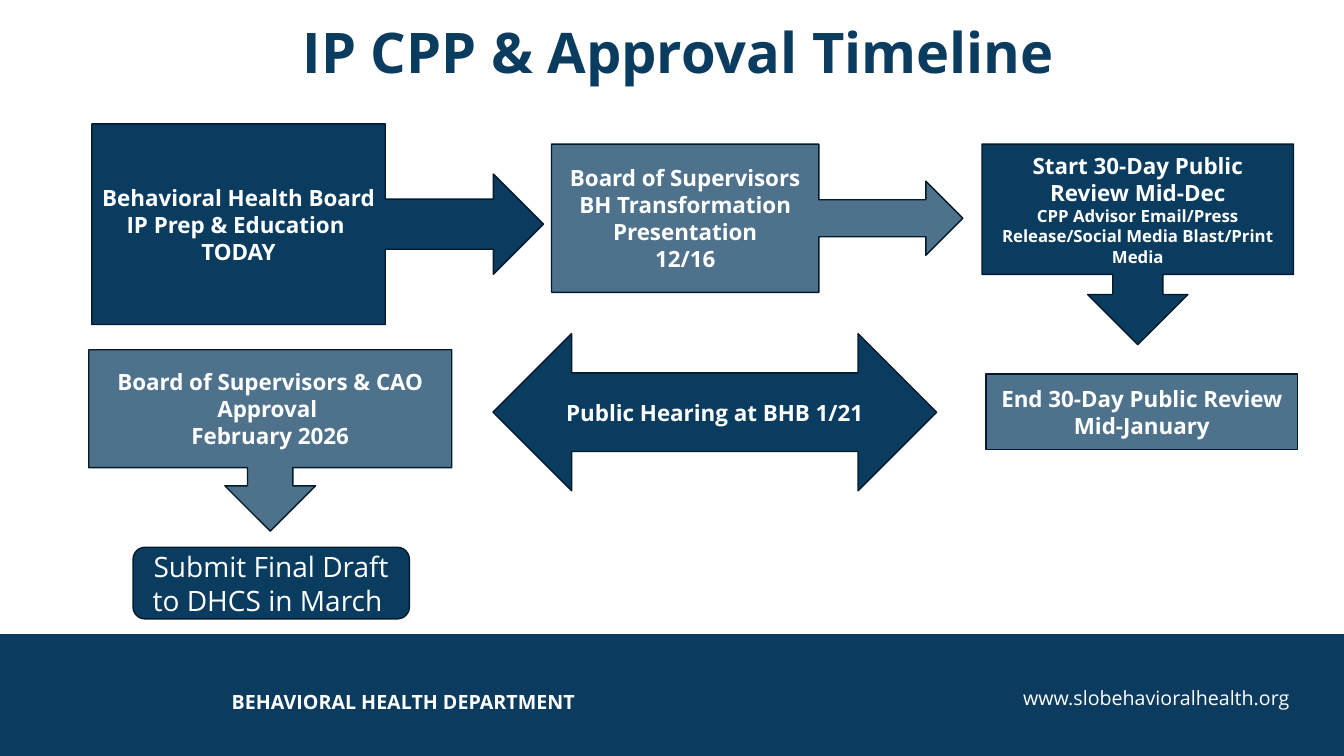
"""Build the IP CPP and approval timeline slide."""
from dataclasses import dataclass

import pptx
import pptx.dml.color
import pptx.enum.shapes
import pptx.enum.text
import pptx.oxml.ns
import pptx.util
from lxml import etree

SHAPES = pptx.enum.shapes.MSO_SHAPE
ALIGN = pptx.enum.text.PP_ALIGN
WIDTH = pptx.util.Inches(13.33)
HEIGHT = pptx.util.Inches(7.5)
NAVY, OUTLINE, WHITE, FOOTER = "0A3C5F", "041A2A", "FFFFFF", "0B3B5E"


@dataclass(frozen=True)
class Area:
    """Hold left, top, width and height as percentages of the slide."""
    left: float
    top: float
    width: float
    height: float

    def lengths(self) -> tuple[int, int, int, int]:
        """Return the area in slide units."""
        return (int(WIDTH * self.left / 100), int(HEIGHT * self.top / 100),
                int(WIDTH * self.width / 100), int(HEIGHT * self.height / 100))


@dataclass(frozen=True)
class Line:
    """Describe one paragraph."""
    text: str
    size: int = 16
    bold: bool = True
    color: str = WHITE
    align: ALIGN = ALIGN.CENTER


@dataclass(frozen=True)
class Step:
    """Describe one timeline shape."""
    kind: SHAPES
    area: Area
    lines: tuple[Line, ...]
    opacity: int = 100


@dataclass(frozen=True)
class Label:
    """Describe one free text box."""
    area: Area
    line: Line
    indent: float = 0


LABELS = (
    Label(Area(16.5, 90.53, 39.16, 4.53),
          Line("BEHAVIORAL HEALTH DEPARTMENT", 14, align=ALIGN.LEFT)),
    Label(Area(57.54, 90, 39.16, 4.53),
          Line("www.slobehavioralhealth.org", 14, False, align=ALIGN.RIGHT)),
    Label(Area(16.58, 1.6, 66.84, 10.27),
          Line("IP CPP & Approval Timeline", 40, color=NAVY), 0.12),
)

STEPS = (
    Step(SHAPES.LEFT_RIGHT_ARROW, Area(36.68, 44.13, 33.01, 20.8),
         (Line("Public Hearing at BHB 1/21"),)),
    Step(SHAPES.RIGHT_ARROW_CALLOUT, Area(6.83, 16.4, 33.61, 26.53),
         (Line("Behavioral Health Board IP Prep & Education "), Line("TODAY"))),
    Step(SHAPES.RIGHT_ARROW_CALLOUT, Area(41.04, 19.07, 30.61, 19.6),
         (Line("Board of Supervisors BH Transformation Presentation"),
          Line("12/16")), 72),
    Step(SHAPES.RECTANGLE, Area(73.37, 49.47, 23.18, 10),
         (Line("End 30-Day Public Review Mid-January"),), 72),
    Step(SHAPES.DOWN_ARROW_CALLOUT, Area(6.6, 46.27, 27.01, 24),
         (Line("Board of Supervisors & CAO Approval "),
          Line("February 2026")), 72),
    Step(SHAPES.DOWN_ARROW_CALLOUT, Area(73.07, 19.07, 23.18, 26.53),
         (Line("Start 30-Day Public Review Mid-Dec"),
          Line("CPP Advisor Email/Press Release/Social Media Blast/Print Media",
               12))),
    Step(SHAPES.ROUNDED_RECTANGLE, Area(9.9, 72.4, 20.56, 9.47),
         (Line("Submit Final Draft to DHCS in March ", 20, False),)),
)


def rgb(color: str) -> pptx.dml.color.RGBColor:
    """Turn a hex string into a colour."""
    return pptx.dml.color.RGBColor.from_string(color)


def write(frame, lines: tuple[Line, ...]) -> None:
    """Fill a text frame with vertically centred paragraphs."""
    frame.word_wrap = True
    frame.vertical_anchor = pptx.enum.text.MSO_ANCHOR.MIDDLE
    for index, line in enumerate(lines):
        paragraph = frame.add_paragraph() if index else frame.paragraphs[0]
        paragraph.text = line.text
        paragraph.alignment = line.align
        font = paragraph.font
        font.name = "Open Sans"
        font.size = pptx.util.Pt(line.size)
        font.bold = line.bold
        font.color.rgb = rgb(line.color)


def add_filled(slide, kind: SHAPES, area: Area, color: str):
    """Add a flat filled shape."""
    shape = slide.shapes.add_shape(kind, *area.lengths())
    shape.shadow.inherit = False
    shape.fill.solid()
    shape.fill.fore_color.rgb = rgb(color)
    return shape


def add_step(slide, step: Step) -> None:
    """Add one outlined timeline shape with its text."""
    shape = add_filled(slide, step.kind, step.area, NAVY)
    shape.line.color.rgb = rgb(OUTLINE)
    shape.line.width = pptx.util.Pt(1)
    if step.opacity < 100:
        qualify = pptx.oxml.ns.qn
        color = shape.element.spPr.find(
            f"{qualify('a:solidFill')}/{qualify('a:srgbClr')}")
        etree.SubElement(color, qualify("a:alpha"), val=str(step.opacity * 1000))
    write(shape.text_frame, step.lines)


def add_label(slide, label: Label) -> None:
    """Add one text box."""
    frame = slide.shapes.add_textbox(*label.area.lengths()).text_frame
    frame.margin_left = pptx.util.Inches(0.1 + label.indent)
    write(frame, (label.line,))


def main() -> None:
    """Create and save the presentation."""
    presentation = pptx.Presentation()
    presentation.slide_width, presentation.slide_height = WIDTH, HEIGHT
    slide = presentation.slides.add_slide(presentation.slide_layouts[6])
    footer = add_filled(slide, SHAPES.RECTANGLE,
                        Area(0, 83.87, 100, 16.13), FOOTER)
    footer.line.fill.background()
    for label in LABELS:
        add_label(slide, label)
    for step in STEPS:
        add_step(slide, step)
    presentation.save("out.pptx")


if __name__ == "__main__":
    main()
